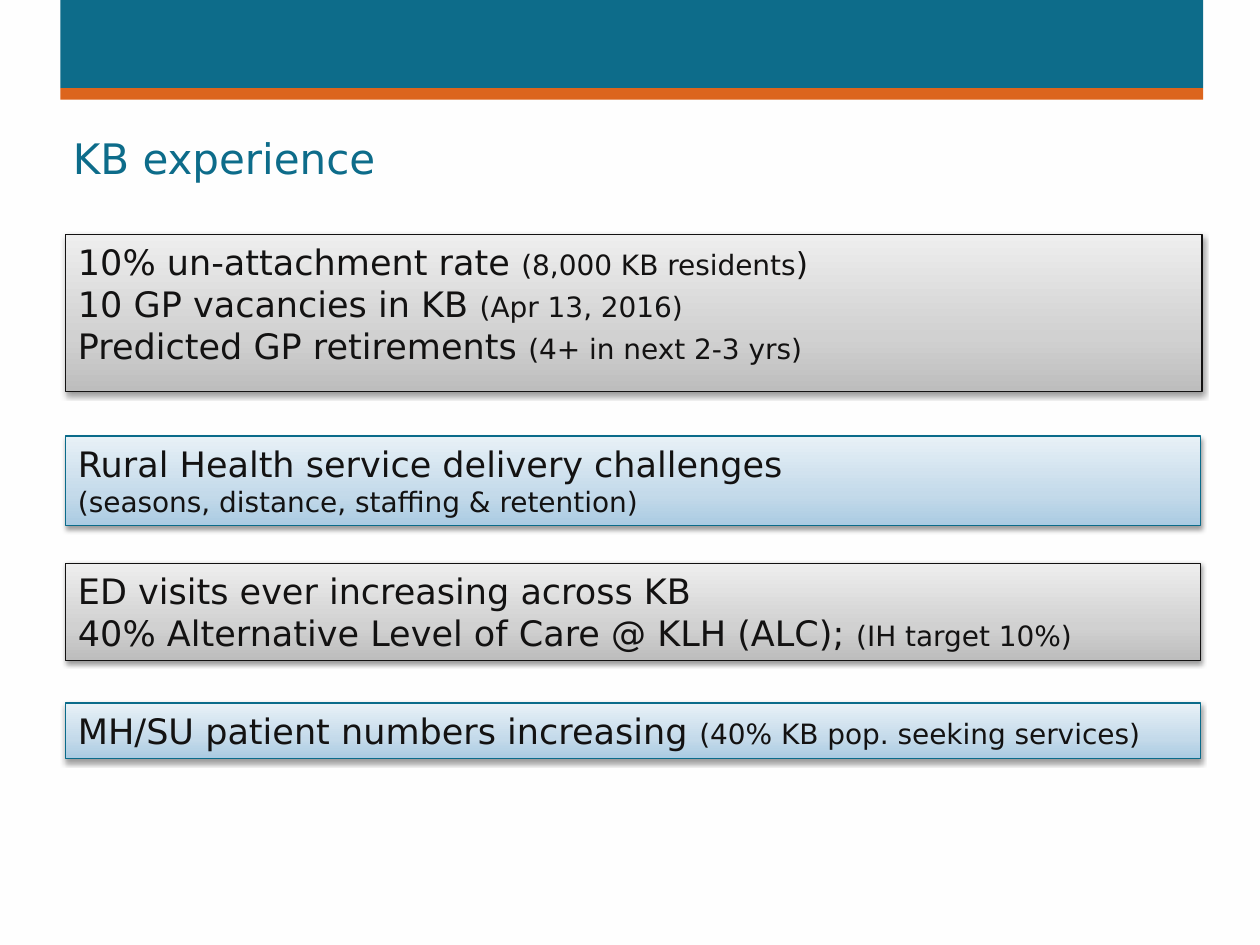
from dataclasses import dataclass

from lxml.etree import SubElement
from pptx import Presentation
from pptx.dml.color import RGBColor
from pptx.enum.shapes import MSO_SHAPE as Preset
from pptx.enum.text import MSO_ANCHOR as Anchor, PP_ALIGN as Align
from pptx.oxml.ns import qn
from pptx.util import Inches, Pt

FONT = "DejaVu Sans"
COLORS = {
    "paper": "FEFEFE",
    "teal": "0D6C8A",
    "orange": "DC651D",
    "ink": "131212",
    "blue_edge": "0A6B8A",
    "shadow": "000000",
}
GRADIENTS = {
    "gray": ((0, "BDBDBD"), (35, "D1D1D1"), (100, "EEEEEE")),
    "blue": ((0, "AACBE2"), (35, "C4DAEA"), (100, "E8F1F7")),
}
EDGES = {"gray": "ink", "blue": "blue_edge"}
LARGE, MEDIUM, SMALL = 20, 18, 16
PANEL_LEFT = 0.52

Line = tuple[tuple[str, int], ...]


@dataclass(frozen=True)
class Band:
    top: float
    height: float
    color: str


@dataclass(frozen=True)
class Panel:
    top: float
    height: float
    theme: str
    lines: tuple[Line, ...]
    width: float = 9.01


BANDS = (Band(0, 0.7, "teal"), Band(0.7, 0.09, "orange"))
PANELS = (
    Panel(1.86, 1.25, "gray", (
        (("10% un-attachment rate ", LARGE), ("(8,000 KB residents", SMALL), (")", MEDIUM)),
        (("10 GP vacancies in KB ", LARGE), ("(Apr 13, 2016)", SMALL)),
        (("Predicted GP retirements ", LARGE), ("(4+ in next 2-3 yrs)", SMALL)),
    ), width=9.02),
    Panel(3.46, 0.71, "blue", (
        (("Rural Health service delivery challenges", LARGE),),
        (("(seasons, distance, staffing & retention)", SMALL),),
    )),
    Panel(4.47, 0.77, "gray", (
        (("ED visits ever increasing across KB", LARGE),),
        (("40% Alternative Level of Care @ KLH (ALC); ", LARGE), ("(IH target 10%)", SMALL)),
    )),
    Panel(5.58, 0.44, "blue", (
        (("MH/SU patient numbers increasing ", LARGE), ("(40% KB pop. seeking services)", SMALL)),
    )),
)


def rgb(name: str) -> RGBColor:
    return RGBColor.from_string(COLORS[name])


def write_text(frame, lines: tuple[Line, ...], *, color: str = "ink", font: str = FONT) -> None:
    frame.word_wrap = True
    frame.vertical_anchor = Anchor.TOP
    for index, line in enumerate(lines):
        paragraph = frame.paragraphs[0] if index == 0 else frame.add_paragraph()
        paragraph.alignment = Align.LEFT
        for text, size in line:
            run = paragraph.add_run()
            run.text = text
            run.font.name = font
            run.font.size = Pt(size)
            run.font.color.rgb = rgb(color)


def apply_gradient(shape, theme: str) -> None:
    shape.fill.gradient()
    shape.fill.gradient_angle = 90
    stops = shape.element.spPr.find(qn("a:gradFill")).find(qn("a:gsLst"))
    for stop in list(stops):
        stops.remove(stop)
    for position, color in GRADIENTS[theme]:
        stop = SubElement(stops, qn("a:gs"), pos=str(position * 1000))
        SubElement(stop, qn("a:srgbClr"), val=color)


def apply_shadow(shape) -> None:
    shape.shadow.inherit = False
    effects = shape.element.spPr.find(qn("a:effectLst"))
    shadow = SubElement(effects, qn("a:outerShdw"), blurRad=str(Pt(3.1)),
                        dist=str(Pt(1.6)), dir="5400000", rotWithShape="0")
    color = SubElement(shadow, qn("a:srgbClr"), val=COLORS["shadow"])
    SubElement(color, qn("a:alpha"), val="38000")


def draw_band(slide, band: Band) -> None:
    bar = slide.shapes.add_shape(Preset.RECTANGLE, Inches(0.48), Inches(band.top),
                                 Inches(9.07), Inches(band.height))
    bar.shadow.inherit = False
    bar.fill.solid()
    bar.fill.fore_color.rgb = rgb(band.color)
    bar.line.fill.background()


def draw_panel(slide, panel: Panel) -> None:
    box = slide.shapes.add_shape(Preset.RECTANGLE, Inches(PANEL_LEFT), Inches(panel.top),
                                 Inches(panel.width), Inches(panel.height))
    apply_gradient(box, panel.theme)
    box.line.color.rgb = rgb(EDGES[panel.theme])
    box.line.width = Pt(0.75)
    apply_shadow(box)
    write_text(box.text_frame, panel.lines)


def main() -> None:
    deck = Presentation()
    deck.slide_width, deck.slide_height = Inches(10), Inches(7.5)
    slide = deck.slides.add_slide(deck.slide_layouts[6])
    slide.background.fill.solid()
    slide.background.fill.fore_color.rgb = rgb("paper")
    for band in BANDS:
        draw_band(slide, band)
    for panel in PANELS:
        draw_panel(slide, panel)
    title = slide.shapes.add_textbox(Inches(0.48), Inches(1), Inches(9.19), Inches(0.5))
    write_text(title.text_frame, ((("KB experience", 24),),), color="teal")
    deck.save("out.pptx")


if __name__ == "__main__":
    main()
